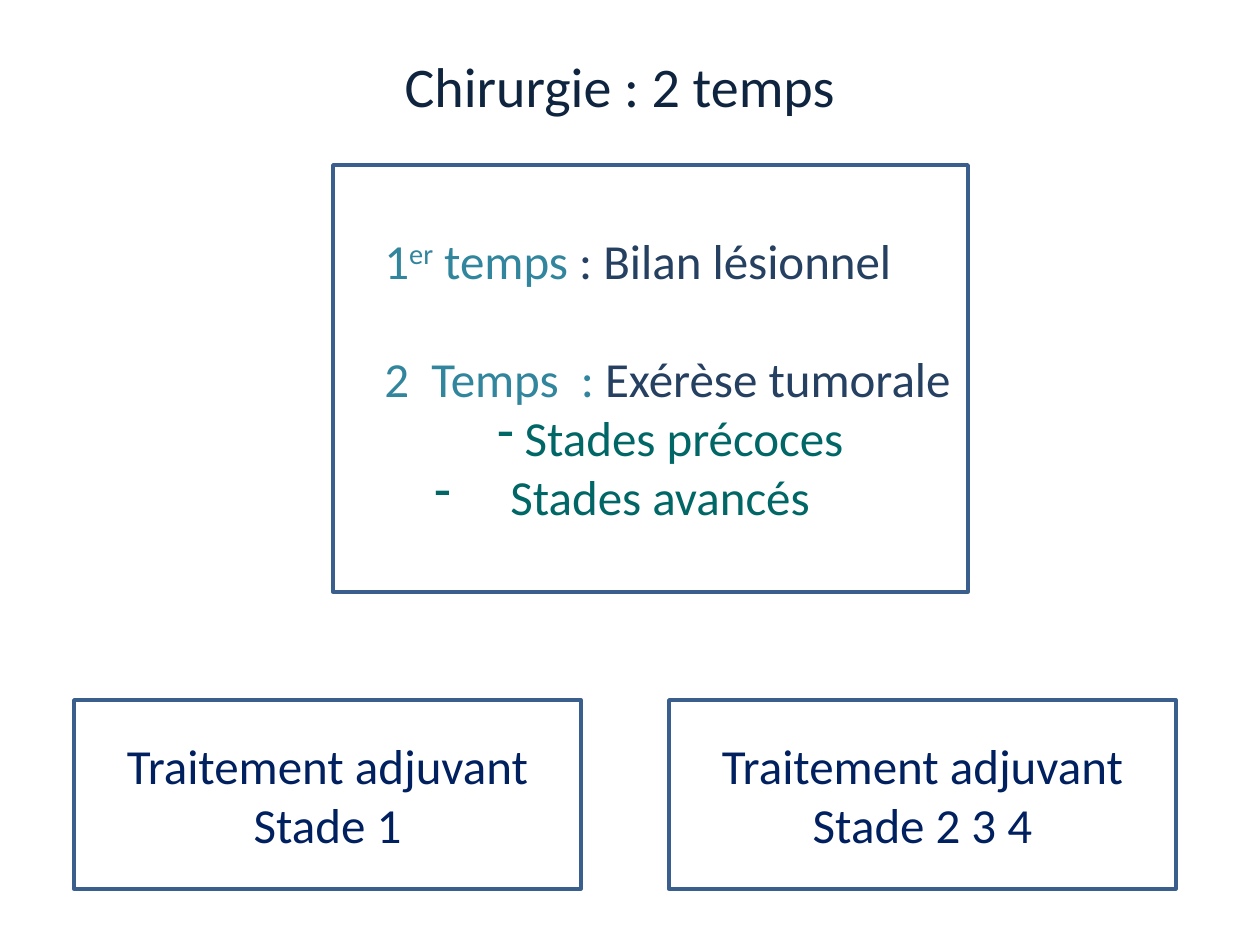
from lxml.etree import SubElement
from pptx import Presentation
from pptx.dml.color import RGBColor
from pptx.enum.shapes import MSO_SHAPE
from pptx.enum.text import MSO_ANCHOR, PP_ALIGN
from pptx.oxml.ns import qn
from pptx.util import Emu, Pt

PX = 914400 // 126
FONT = "Calibri"
WHITE = RGBColor(0xFF, 0xFF, 0xFF)
BORDER = RGBColor(0x3A, 0x5F, 0x8C)
TITLE_INK = RGBColor(0x0F, 0x24, 0x3E)
TEAL = RGBColor(0x31, 0x85, 0x9C)
SLATE = RGBColor(0x25, 0x40, 0x61)
GREEN = RGBColor(0x00, 0x66, 0x66)
NAVY = RGBColor(0x00, 0x20, 0x60)

TITLE = "Chirurgie : 2 temps"
STEPS = [
    [("1", TEAL), ("er", TEAL), (" temps ", TEAL), (": Bilan lésionnel", SLATE)],
    [("2  Temps  : ", TEAL), ("Exérèse tumorale", SLATE)],
]
STAGES = [(" Stades précoces", 102), ("\tStades avancés", 39)]
BULLET_INDENT = 11
TREATMENTS = [
    ["Traitement adjuvant", "Stade 1"],
    ["Traitement adjuvant", "Stade 2 3 4"],
]
TREATMENT_LEFT, TREATMENT_STEP = 74, 595


def px(*lengths):
    return [Emu(length * PX) for length in lengths]


def set_font(para, size, color=None):
    para.font.name = FONT
    para.font.size = Pt(size)
    if color is not None:
        para.font.color.rgb = color


def add_frame(page, left, top, width, height):
    frame = page.shapes.add_shape(MSO_SHAPE.RECTANGLE, *px(left, top, width, height))
    frame.shadow.inherit = False
    frame.line.color.rgb = BORDER
    frame.line.width = Pt(2)
    return frame


def next_paragraph(text_frame, index):
    return text_frame.paragraphs[0] if index == 0 else text_frame.add_paragraph()


def add_title(page):
    title = page.shapes.title
    title.left, title.top, title.width, title.height = px(392, 45, 474, 81)
    title.text_frame.word_wrap = True
    title.text_frame.vertical_anchor = MSO_ANCHOR.TOP
    para = title.text_frame.paragraphs[0]
    para.text = TITLE
    para.alignment = PP_ALIGN.LEFT
    set_font(para, 32, TITLE_INK)


def add_steps(page):
    box = page.shapes.add_textbox(*px(372, 224, 606, 310))
    text_frame = box.text_frame
    text_frame.word_wrap = True
    for index, spans in enumerate(STEPS):
        para = next_paragraph(text_frame, index)
        if index:
            para.space_before = Pt(34)
        set_font(para, 28)
        for text, color in spans:
            span = para.add_run()
            span.text = text
            span.font.color.rgb = color
            if text == "er":
                span.font._element.set("baseline", "30000")
    for text, margin in STAGES:
        para = text_frame.add_paragraph()
        para.text = text
        properties = para._p.get_or_add_pPr()
        properties.set("marL", str(margin * PX))
        properties.set("indent", str(BULLET_INDENT * PX))
        SubElement(properties, qn("a:buChar")).set("char", "-")
        set_font(para, 28, GREEN)


def add_treatments(page):
    for column, lines in enumerate(TREATMENTS):
        left = TREATMENT_LEFT + column * TREATMENT_STEP
        frame = add_frame(page, left, 700, 507, 189)
        frame.fill.solid()
        frame.fill.fore_color.rgb = WHITE
        frame.text_frame.vertical_anchor = MSO_ANCHOR.MIDDLE
        for index, line in enumerate(lines):
            para = next_paragraph(frame.text_frame, index)
            para.text = line
            para.alignment = PP_ALIGN.CENTER
            set_font(para, 28, NAVY)


def main():
    deck = Presentation()
    deck.slide_width, deck.slide_height = px(1260, 945)
    page = deck.slides.add_slide(deck.slide_layouts[5])
    add_title(page)
    add_steps(page)
    add_frame(page, 333, 165, 635, 427).fill.background()
    add_treatments(page)
    deck.save("out.pptx")


if __name__ == "__main__":
    main()
